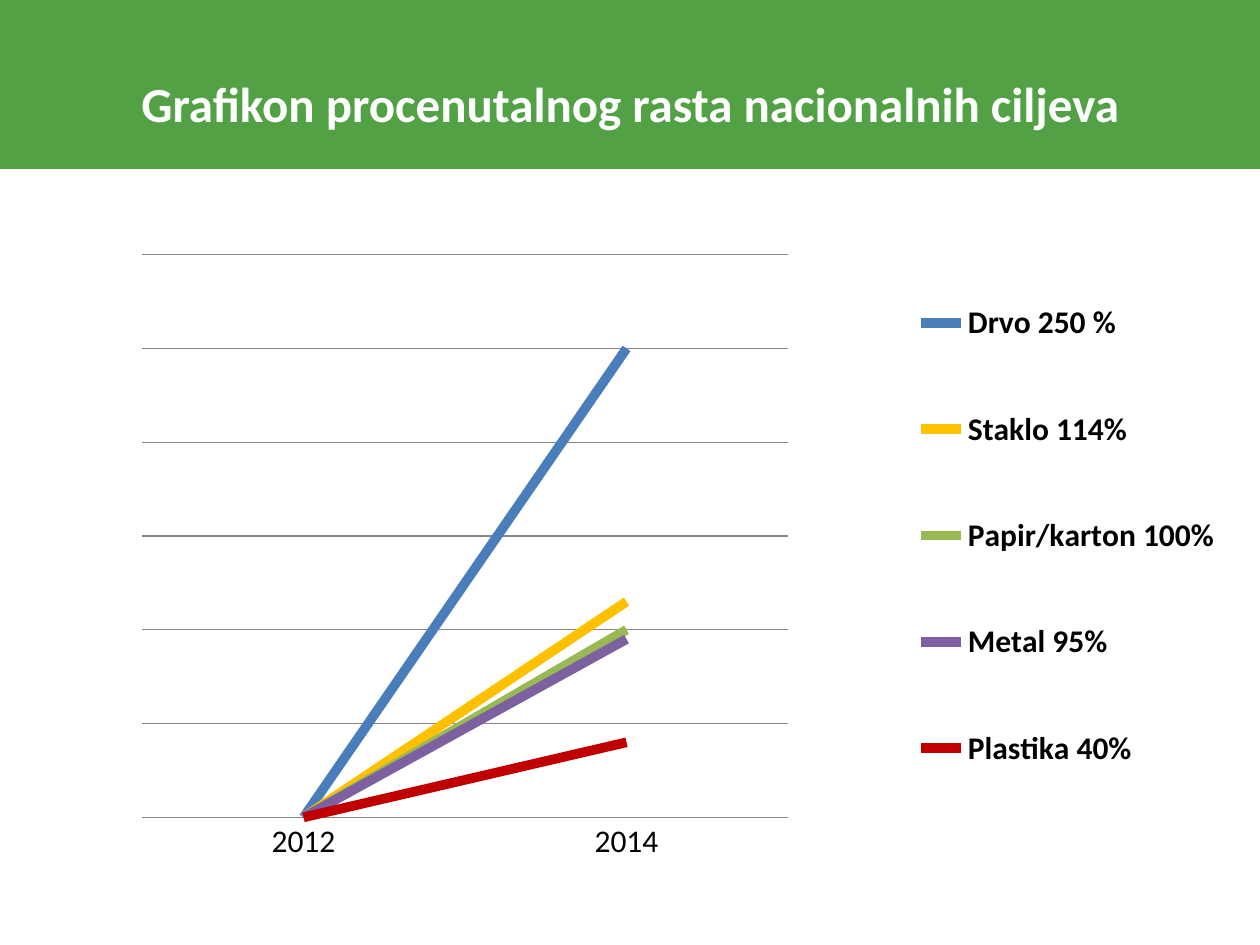
from dataclasses import dataclass

from lxml.etree import SubElement
from pptx import Presentation
from pptx.chart.data import CategoryChartData
from pptx.dml.color import RGBColor
from pptx.enum.chart import XL_CHART_TYPE, XL_LEGEND_POSITION, XL_TICK_MARK
from pptx.enum.shapes import MSO_SHAPE
from pptx.enum.text import MSO_ANCHOR, PP_ALIGN
from pptx.oxml.ns import qn
from pptx.util import Inches, Pt


@dataclass(frozen=True)
class Theme:
    """Colours and sizes of the slide."""
    font: str = "Calibri"
    band: str = "52A145"
    light: str = "FFFFFF"
    dark: str = "000000"
    grid: str = "868686"
    title: float = 28
    label: float = 18
    line: float = 5.5
    hair: float = 0.75


THEME = Theme()
YEARS = ["2012", "2014"]
GOALS = [
    ("Drvo 250 %", 100, "4A7EBB"),
    ("Staklo 114%", 46, "FFC000"),
    ("Papir/karton 100%", 40, "98B954"),
    ("Metal 95%", 38, "7D60A0"),
    ("Plastika 40%", 16, "C00000"),
]


def style(font, size, color, bold=False):
    """Set the face, size, colour and weight of a font."""
    font.name, font.size, font.bold = THEME.font, Pt(size), bold
    font.color.rgb = RGBColor.from_string(color)


def stroke(line, color, width):
    """Set the colour and width of a line."""
    line.color.rgb = RGBColor.from_string(color)
    line.width = Pt(width)


def add_band(slide):
    """Draw the title band behind everything else."""
    band = slide.shapes.add_shape(
        MSO_SHAPE.RECTANGLE, 0, 0, Inches(10), Inches(1.33))
    band.shadow.inherit = False
    band.fill.solid()
    band.fill.fore_color.rgb = RGBColor.from_string(THEME.band)
    stroke(band.line, THEME.band, 2)
    slide.shapes._spTree.insert(2, band._element)


def set_title(slide, text):
    """Place and fill the title."""
    title = slide.shapes.title
    title.left, title.top = Inches(0.5), Inches(0.3)
    title.width, title.height = Inches(9), Inches(1.03)
    frame = title.text_frame
    frame.vertical_anchor = MSO_ANCHOR.MIDDLE
    para = frame.paragraphs[0]
    para.alignment = PP_ALIGN.CENTER
    run = para.add_run()
    run.text = text
    style(run.font, THEME.title, THEME.light, True)


def set_layout(node, after, box, inner=False):
    """Fix a chart part to fractions of the chart area."""
    for old in node.findall(qn("c:layout")):
        node.remove(old)
    layout = SubElement(node, qn("c:layout"))
    manual = SubElement(layout, qn("c:manualLayout"))
    parts = [("layoutTarget", "inner")] if inner else []
    parts += [("xMode", "edge"), ("yMode", "edge"), *zip("xywh", box)]
    for name, value in parts:
        SubElement(manual, qn(f"c:{name}")).set("val", str(value))
    if after is None:
        node.insert(0, layout)
    else:
        after.addnext(layout)


def set_axes(chart):
    """Show the years and gridlines, and hide the value axis."""
    years, values = chart.category_axis, chart.value_axis
    years.major_tick_mark = years.minor_tick_mark = XL_TICK_MARK.NONE
    stroke(years.format.line, THEME.grid, THEME.hair)
    values.minimum_scale, values.maximum_scale = 0, 120
    values.major_unit = 20
    values.has_major_gridlines = True
    stroke(values.major_gridlines.format.line, THEME.grid, THEME.hair)
    values.tick_labels.number_format = "0%"
    values.tick_labels.number_format_is_linked = False
    values.visible = False


def set_legend(chart):
    """Put the bold legend on the right."""
    chart.has_legend = True
    legend = chart.legend
    legend.position = XL_LEGEND_POSITION.RIGHT
    legend.include_in_layout = False
    style(legend.font, THEME.label, THEME.dark, True)
    node = legend._element
    set_layout(node, node.find(qn("c:legendPos")), (0.68, 0, 0.32, 0.91))


def add_chart(slide):
    """Draw the growth of each goal as a line."""
    data = CategoryChartData()
    data.categories = YEARS
    for name, value, _ in GOALS:
        data.add_series(name, (0, value))
    chart = slide.shapes.add_chart(
        XL_CHART_TYPE.LINE, Inches(0.47), Inches(1.87),
        Inches(9.53), Inches(5.23), data).chart
    chart.has_title = False
    style(chart.font, THEME.label, THEME.dark)
    chart.plots[0].vary_by_categories = False
    for line, (_, _, color) in zip(chart.plots[0].series, GOALS):
        line.smooth = False
        stroke(line.format.line, color, THEME.line)
    set_axes(chart)
    set_legend(chart)
    area = chart._chartSpace.chart.plotArea
    set_layout(area, None, (0.069, 0.029, 0.538, 0.854), True)


def main():
    """Build and save the slide."""
    deck = Presentation()
    deck.slide_width, deck.slide_height = Inches(10), Inches(7.5)
    slide = deck.slides.add_slide(deck.slide_layouts[5])
    add_band(slide)
    set_title(slide, "Grafikon procenutalnog rasta nacionalnih ciljeva")
    add_chart(slide)
    deck.save("out.pptx")


if __name__ == "__main__":
    main()
